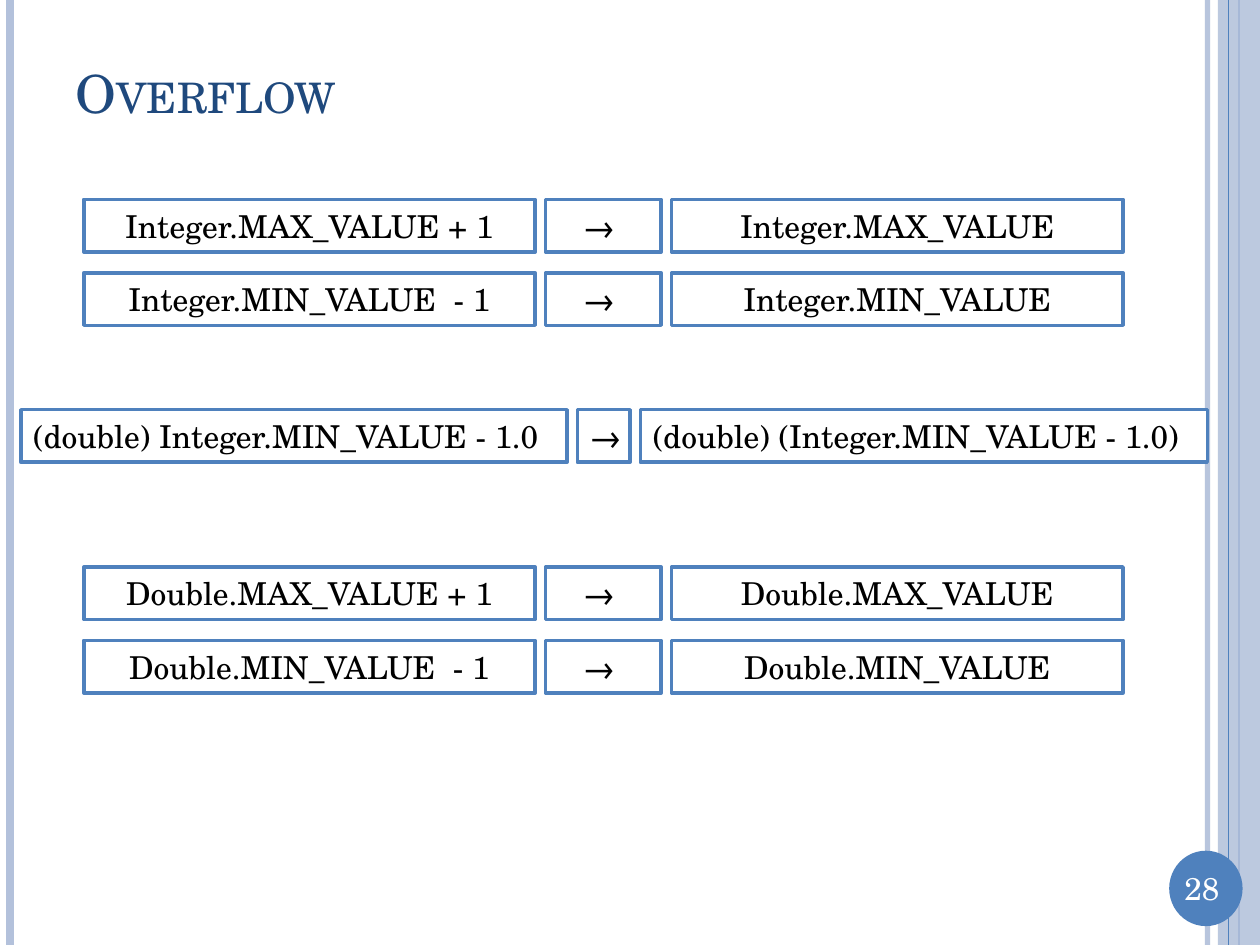
from lxml import etree
from pptx import Presentation
from pptx.dml.color import RGBColor
from pptx.enum import shapes, text
from pptx.oxml import ns
from pptx.util import Cm, Pt

FONT = "TeX Gyre Schola"
WHITE = RGBColor(0xFF, 0xFF, 0xFF)
BLACK = RGBColor(0, 0, 0)
BLUE = RGBColor(0x4F, 0x81, 0xBD)
PALE_BLUE = RGBColor(0xB3, 0xC1, 0xDB)
NAVY = RGBColor(0x1F, 0x49, 0x7D)
SLIDE_WIDTH, SLIDE_HEIGHT = Cm(25.4), Cm(19.05)

BOX_HEIGHT, BOX_GAP, ROW_PITCH = Cm(1.06), Cm(0.21), Cm(1.48)
NARROW_COLUMNS = (Cm(9.1), Cm(2.33), Cm(9.1))
WIDE_COLUMNS = (Cm(11.01), Cm(1.06), Cm(11.43))
CENTRED = (text.PP_ALIGN.CENTER,) * 3
LEFT_SIDES = (text.PP_ALIGN.LEFT, text.PP_ALIGN.CENTER, text.PP_ALIGN.LEFT)

INTEGER_ROWS = [
    ("Integer.MAX_VALUE + 1", "→ ", "Integer.MAX_VALUE"),
    ("Integer.MIN_VALUE  - 1", "→ ", "Integer.MIN_VALUE"),
]
CAST_ROWS = [
    ("(double) Integer.MIN_VALUE - 1.0", "→", "(double) (Integer.MIN_VALUE - 1.0)"),
]
DOUBLE_ROWS = [
    ("Double.MAX_VALUE + 1", "→ ", "Double.MAX_VALUE"),
    ("Double.MIN_VALUE  - 1", "→ ", "Double.MIN_VALUE"),
]


def write(shape, words, size, color, alignment):
    paragraph = shape.text_frame.paragraphs[0]
    paragraph.text = words
    paragraph.alignment = alignment
    paragraph.font.name = FONT
    paragraph.font.size = Pt(size)
    paragraph.font.color.rgb = color
    return paragraph


def set_opacity(shape, percent):
    """Make the shape's first solid colour partly transparent."""
    color = shape._element.spPr.find(".//" + ns.qn("a:srgbClr"))
    etree.SubElement(color, ns.qn("a:alpha")).set("val", str(percent * 1000))


def add_filled_shape(slide, kind, left, top, width, height, fill):
    shape = slide.shapes.add_shape(kind, left, top, width, height)
    shape.shadow.inherit = False
    shape.fill.solid()
    shape.fill.fore_color.rgb = fill
    shape.line.fill.background()
    return shape


def add_vertical_rule(slide, x, color, width):
    rule = slide.shapes.add_connector(
        shapes.MSO_CONNECTOR.STRAIGHT, x, 0, x, SLIDE_HEIGHT)
    rule.line.color.rgb = color
    rule.line.width = Pt(width)
    etree.SubElement(rule._element.spPr, ns.qn("a:effectLst"))
    return rule


def add_side_bands(slide):
    set_opacity(add_vertical_rule(slide, Cm(24.34), PALE_BLUE, 3), 93)
    add_vertical_rule(slide, Cm(0.21), PALE_BLUE, 4.5)
    add_vertical_rule(slide, Cm(24.98), BLUE, 1.5)
    band_left = Cm(24.55)
    band = add_filled_shape(slide, shapes.MSO_SHAPE.RECTANGLE, band_left, 0,
                            SLIDE_WIDTH - band_left, SLIDE_HEIGHT, PALE_BLUE)
    set_opacity(band, 87)
    add_vertical_rule(slide, Cm(24.76), BLUE, 0.75)


def add_page_number(slide, number, left, top, width, height):
    add_filled_shape(slide, shapes.MSO_SHAPE.OVAL, left, top, width, height, BLUE)
    label = slide.shapes.add_textbox(
        left - Cm(0.08), top + Cm(0.25), width, Cm(1.02))
    label.text_frame.word_wrap = True
    write(label, number, 18, WHITE, text.PP_ALIGN.CENTER)


def format_title(title, words, left, top, width, height):
    title.left, title.top, title.width, title.height = left, top, width, height
    title.text_frame.vertical_anchor = text.MSO_ANCHOR.MIDDLE
    paragraph = write(title, words, 30, NAVY, text.PP_ALIGN.LEFT)
    paragraph.runs[0]._r.get_or_add_rPr().set("cap", "small")


def add_expression_rows(slide, rows, left, top, columns, alignments):
    """Place rows of expression, arrow and result from a top left corner."""
    for row_index, row in enumerate(rows):
        x, y = left, top + row_index * ROW_PITCH
        for words, width, alignment in zip(row, columns, alignments):
            box = add_filled_shape(slide, shapes.MSO_SHAPE.RECTANGLE,
                                   x, y, width, BOX_HEIGHT, WHITE)
            box.line.color.rgb = BLUE
            box.line.width = Pt(2)
            box.text_frame.vertical_anchor = text.MSO_ANCHOR.MIDDLE
            write(box, words, 18, BLACK, alignment)
            x += width + BOX_GAP


def main():
    presentation = Presentation()
    presentation.slide_width, presentation.slide_height = SLIDE_WIDTH, SLIDE_HEIGHT
    slide = presentation.slides.add_slide(presentation.slide_layouts[5])
    add_side_bands(slide)
    add_page_number(slide, "28", Cm(23.57), Cm(17.15), Cm(1.48), Cm(1.52))
    format_title(slide.shapes.title, "Overflow",
                 Cm(1.27), Cm(0.76), Cm(22.02), Cm(2.21))
    add_expression_rows(slide, INTEGER_ROWS, Cm(1.69), Cm(4.02),
                        NARROW_COLUMNS, CENTRED)
    add_expression_rows(slide, CAST_ROWS, Cm(0.42), Cm(8.26),
                        WIDE_COLUMNS, LEFT_SIDES)
    add_expression_rows(slide, DOUBLE_ROWS, Cm(1.69), Cm(11.43),
                        NARROW_COLUMNS, CENTRED)
    presentation.save("out.pptx")


if __name__ == "__main__":
    main()
